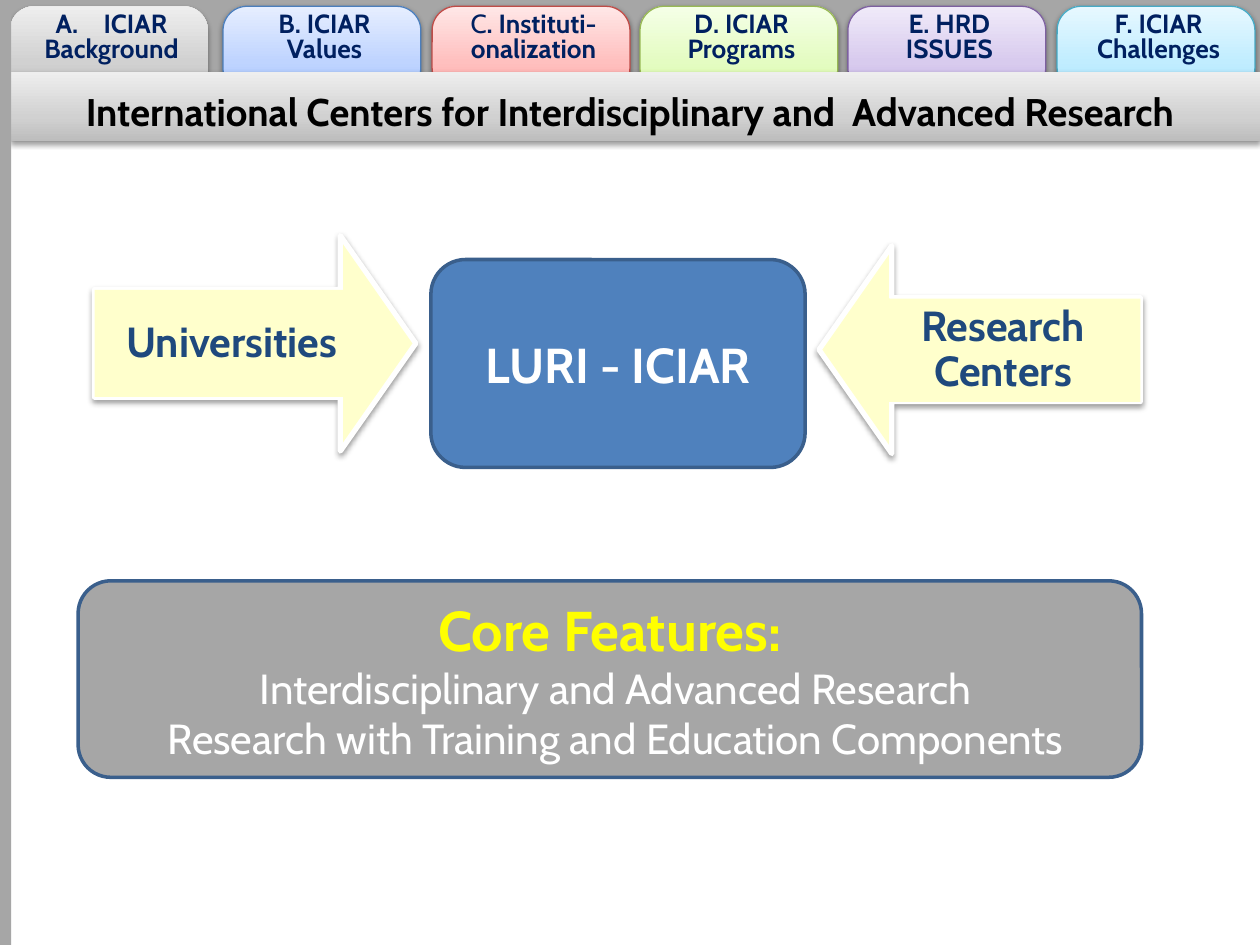
from copy import deepcopy
from dataclasses import dataclass

from lxml.etree import SubElement
from pptx import Presentation
from pptx.dml.color import RGBColor
from pptx.enum.shapes import MSO_SHAPE
from pptx.enum.text import MSO_ANCHOR, PP_ALIGN
from pptx.oxml.ns import qn
from pptx.util import Inches, Pt

FONT = "Cabin"
HUES = {
    "gray": "A6A6A6", "white": "FFFFFF", "black": "000000", "navy": "002060",
    "cream": "FFFFCC", "ink": "1F497D", "blue": "4F81BD", "edge": "3A5F8C",
    "gold": "FFFF00",
}
FADES = {
    "gray": ("BDBDBD", "D1D1D1", "EEEEEE"),
    "blue": ("A4C4FF", "BFD4FF", "E6EEFF"),
    "red": ("FFA6A5", "FFC0BF", "FFE7E7"),
    "green": ("DAFDA7", "E4FCC2", "F5FFE7"),
    "plum": ("C9B5E8", "D8CBEE", "F0EAF9"),
    "aqua": ("A7E6FF", "C1EDFF", "E7F8FF"),
}
RIMS = {"blue": "4B7EBC", "red": "BF4C48", "green": "98B955",
        "plum": "7D60A0", "aqua": "46AAC5"}


@dataclass
class Box:
    """Place and size in inches."""
    left: float
    top: float
    width: float
    height: float

    def emu(self) -> list:
        """Return the four lengths."""
        return [Inches(n) for n in (self.left, self.top, self.width, self.height)]


@dataclass
class Tab:
    """One tab of the top row."""
    left: float
    fade: str
    text: str
    lead: str = ""
    auto: bool = False


@dataclass
class Arrow:
    """A block arrow and its label."""
    box: Box
    turn: int
    label: Box
    text: str


TABS = [
    Tab(1.77, "blue", "B. ICIAR\nValues"),
    Tab(3.43, "red", ". Instituti-\nonalization", lead="C"),
    Tab(5.08, "green", "D. ICIAR\nPrograms"),
    Tab(6.73, "plum", "E. HRD\nISSUES"),
    Tab(8.39, "aqua", "F. ICIAR\nChallenges"),
    Tab(0.08, "gray", "ICIAR\nBackground", auto=True),
]
ARROWS = [
    Arrow(Box(6.95, 1.5, 1.65, 2.55), 90, Box(6.87, 2.37, 2.18, 0.82), "Research Centers"),
    Arrow(Box(1.17, 1.45, 1.71, 2.55), 270, Box(0.75, 2.3, 2.18, 0.85), "Universities"),
]


def block(slide, kind, box: Box, fill: str = "", rim: str = "", width: float = 0):
    """Add a flat shape with an optional solid fill and outline."""
    shape = slide.shapes.add_shape(kind, *box.emu())
    shape.shadow.inherit = False
    if fill:
        shape.fill.solid()
        shape.fill.fore_color.rgb = RGBColor.from_string(fill)
    if rim:
        shape.line.color.rgb = RGBColor.from_string(rim)
        shape.line.width = Pt(width)
    else:
        shape.line.fill.background()
    return shape


def fade(shape, name: str) -> None:
    """Fill a shape with a three-stop upward gradient."""
    shape.fill.gradient()
    shape.fill.gradient_angle = 90
    stops = shape._element.spPr.find(qn("a:gradFill")).find(qn("a:gsLst"))
    stops.append(deepcopy(stops[-1]))
    for stop, hue, spot in zip(shape.fill.gradient_stops, FADES[name], (0, 0.35, 1)):
        stop.color.rgb = RGBColor.from_string(hue)
        stop.position = spot


def shade(shape) -> None:
    """Drop a soft shadow straight below a shape."""
    effects = shape._element.spPr.find(qn("a:effectLst"))
    drop = SubElement(effects, qn("a:outerShdw"), blurRad="40000", dist="20000",
                      dir="5400000", rotWithShape="0")
    tint = SubElement(drop, qn("a:srgbClr"), val=HUES["black"])
    SubElement(tint, qn("a:alpha"), val="38000")


def style(para, size: float, hue: str, bold: bool = True, gap: float = 1) -> None:
    """Centre a paragraph and format its runs."""
    para.alignment = PP_ALIGN.CENTER
    para.line_spacing = gap
    for run in para.runs:
        run.font.name = FONT
        run.font.size = Pt(size)
        run.font.bold = bold
        run.font.color.rgb = RGBColor.from_string(HUES[hue])


def write(shape, text: str, size: float, hue: str, gap: float = 1, inset=None,
          anchor=MSO_ANCHOR.MIDDLE):
    """Write uniform centred text and return its frame."""
    frame = shape.text_frame
    frame.word_wrap = True
    frame.vertical_anchor = anchor
    if inset:
        (frame.margin_left, frame.margin_top,
         frame.margin_right, frame.margin_bottom) = map(Inches, inset)
    frame.text = text
    for para in frame.paragraphs:
        style(para, size, hue, gap=gap)
    return frame


def indent(para, left: float, first: float):
    """Set a hanging indent and return the paragraph properties."""
    props = para._p.get_or_add_pPr()
    props.set("marL", str(Inches(left)))
    props.set("indent", str(Inches(first)))
    return props


def add_tab(slide, tab: Tab) -> None:
    """Draw one tab."""
    shape = block(slide, MSO_SHAPE.ROUNDED_RECTANGLE, Box(tab.left, 0.05, 1.57, 0.68),
                  rim=RIMS.get(tab.fade, ""), width=0.75)
    shape.adjustments[0] = 0.28
    fade(shape, tab.fade)
    shade(shape)
    frame = write(shape, tab.text, 15, "navy", 0.8, (0.04, 0, 0, 0.05), MSO_ANCHOR.TOP)
    head = frame.paragraphs[0]
    if tab.lead:
        rest = head.text
        head.text = tab.lead
        head.add_run().text = rest
        style(head, 15, "navy", gap=0.8)
        head.runs[0].font.bold = False
    if tab.auto:
        props = [indent(para, 0.38, -0.38) for para in frame.paragraphs]
        SubElement(props[0], qn("a:buAutoNum"), type="alphaUcPeriod")


def add_arrow(slide, arrow: Arrow) -> None:
    """Draw a block arrow with its label."""
    shape = block(slide, MSO_SHAPE.DOWN_ARROW, arrow.box, HUES["cream"], HUES["white"], 3)
    shape.adjustments[0] = 0.5
    shape.adjustments[1] = 0.35
    shape.rotation = arrow.turn
    shade(shape)
    label = block(slide, MSO_SHAPE.RECTANGLE, arrow.label, HUES["cream"])
    write(label, arrow.text, 24, "ink", 0.9, (0.11,) * 4)


def main() -> None:
    """Build and save the slide."""
    deck = Presentation()
    deck.slide_width, deck.slide_height = Inches(10), Inches(7.5)
    slide = deck.slides.add_slide(deck.slide_layouts[6])
    block(slide, MSO_SHAPE.RECTANGLE, Box(-0.04, -0.03, 10.04, 1.15), HUES["gray"])
    for tab in TABS:
        add_tab(slide, tab)
    banner = block(slide, MSO_SHAPE.RECTANGLE, Box(0.08, 0.57, 9.92, 0.55))
    fade(banner, "gray")
    shade(banner)
    block(slide, MSO_SHAPE.RECTANGLE, Box(-0.04, 0, 0.13, 7.5), HUES["gray"])
    for arrow in ARROWS:
        add_arrow(slide, arrow)
    hub = block(slide, MSO_SHAPE.ROUNDED_RECTANGLE, Box(3.42, 2.06, 2.97, 1.65),
                HUES["blue"], HUES["edge"], 2)
    write(hub, "LURI - ICIAR", 28, "white")
    core = block(slide, MSO_SHAPE.ROUNDED_RECTANGLE, Box(0.62, 4.61, 8.44, 1.56),
                 HUES["gray"], HUES["edge"], 2)
    frame = write(core, "Core Features:\nInterdisciplinary and Advanced Research\n"
                  "Research with Training and Education Components", 32, "gold")
    for para in frame.paragraphs[1:]:
        style(para, 24, "white", bold=False)
        indent(para, 0.39, -0.3)
    title = slide.shapes.add_textbox(*Box(0, 0.6, 10, 0.56).emu())
    write(title, "International Centers for Interdisciplinary and  Advanced Research",
          22, "black")
    deck.save("out.pptx")


if __name__ == "__main__":
    main()
